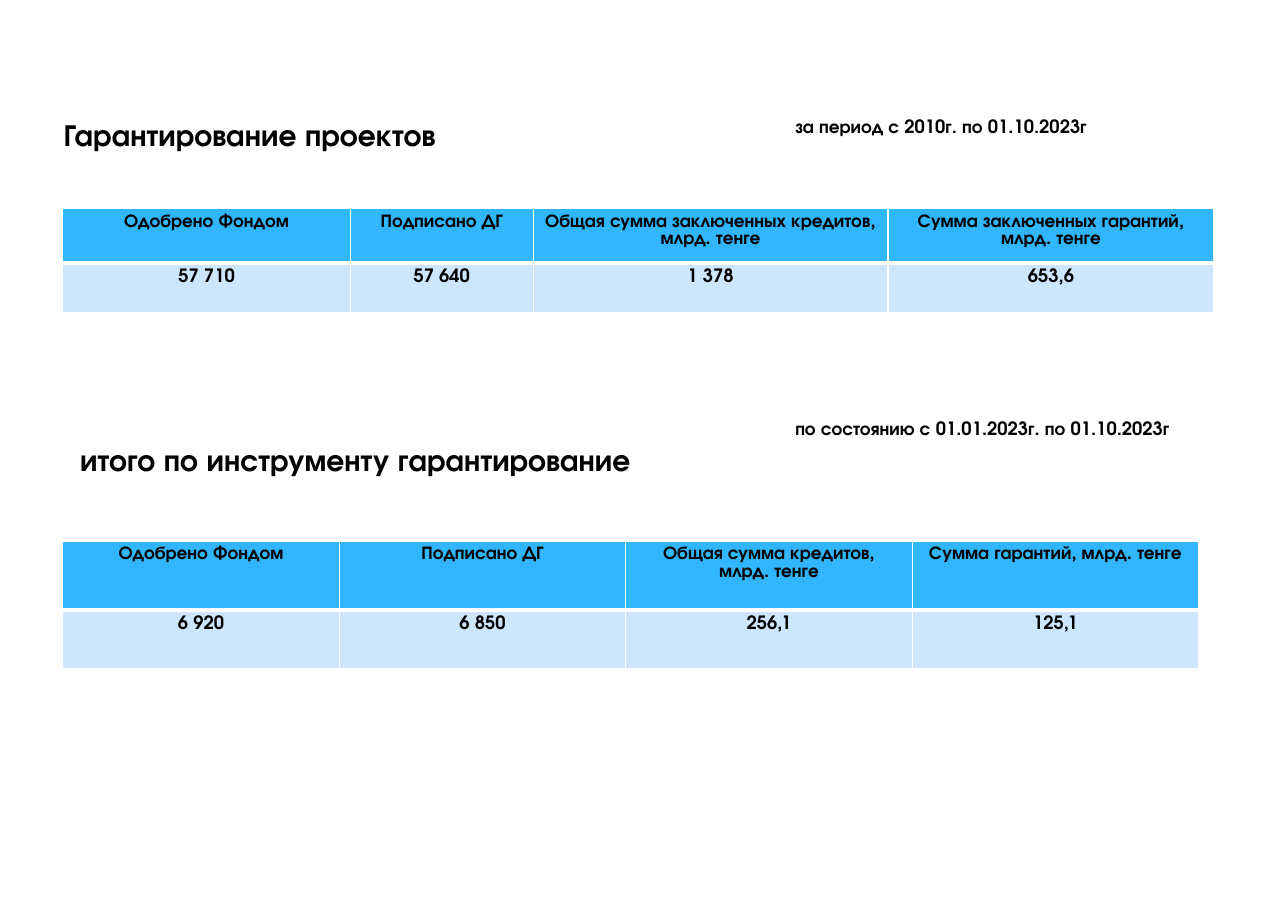
from dataclasses import dataclass

from lxml.etree import SubElement
from pptx import Presentation
from pptx.dml.color import RGBColor
from pptx.enum.text import MSO_AUTO_SIZE as AutoSize, PP_ALIGN as Align
from pptx.oxml.ns import qn
from pptx.util import Inches, Pt


@dataclass(frozen=True)
class Theme:
    """Colours, font, type sizes and rule widths of the slide."""
    font: str = "TeX Gyre Adventor"
    ink: str = "000000"
    header: str = "31B6FD"
    body: str = "CEE5FE"
    rule: str = "FFFFFF"
    title_size: int = 20
    text_size: int = 12
    thin: int = 1
    thick: int = 3


THEME = Theme()


def write_text(frame, text, size=THEME.text_size, align=Align.LEFT):
    """Write one bold paragraph into a text frame."""
    frame.word_wrap = True
    paragraph = frame.paragraphs[0]
    paragraph.alignment = align
    run = paragraph.add_run()
    run.text = text
    run.font.name = THEME.font
    run.font.size = Pt(size)
    run.font.bold = True
    run.font.color.rgb = RGBColor.from_string(THEME.ink)


def add_label(slide, box, text, **text_format):
    """Add a text box that grows with its text."""
    shape = slide.shapes.add_textbox(*map(Inches, box))
    write_text(shape.text_frame, text, **text_format)
    shape.text_frame.auto_size = AutoSize.SHAPE_TO_FIT_TEXT


def set_borders(cell, top, bottom):
    """Give a cell white borders, with its own top and bottom widths."""
    properties = cell._tc.get_or_add_tcPr()
    widths = {"a:lnL": THEME.thin, "a:lnR": THEME.thin, "a:lnT": top, "a:lnB": bottom}
    for index, (tag, width) in enumerate(widths.items()):
        line = properties.makeelement(qn(tag), {"w": str(Pt(width))})
        fill = SubElement(line, qn("a:solidFill"))
        SubElement(fill, qn("a:srgbClr"), val=THEME.rule)
        properties.insert(index, line)


def add_figures(slide, left, top, widths, heights, rows):
    """Add a table with a header row and a row of figures."""
    frame = slide.shapes.add_table(
        len(rows), len(widths), Inches(left), Inches(top),
        Inches(sum(widths)), Inches(sum(heights)))
    table = frame.table
    for column, width in zip(table.columns, widths):
        column.width = Inches(width)
    styles = ((THEME.header, THEME.thin, THEME.thick),
              (THEME.body, THEME.thick, THEME.thin))
    for row, height, texts, (colour, upper, lower) in zip(table.rows, heights, rows, styles):
        row.height = Inches(height)
        for cell, text in zip(row.cells, texts):
            cell.fill.solid()
            cell.fill.fore_color.rgb = RGBColor.from_string(colour)
            set_borders(cell, upper, lower)
            write_text(cell.text_frame, text, align=Align.CENTER)


def add_section(slide, box, title, title_box, period, period_box, widths, heights, rows):
    """Place a title, a period and a table relative to the section box."""
    left, top = box

    def place(area):
        return left + area[0], top + area[1], *area[2:]

    add_label(slide, place(period_box), period)
    add_label(slide, place(title_box), title, size=THEME.title_size)
    add_figures(slide, left, top, widths, heights, rows)


def main():
    """Build the slide on guaranteed projects."""
    presentation = Presentation()
    presentation.slide_width = Inches(11.69)
    presentation.slide_height = Inches(8.27)
    slide = presentation.slides.add_slide(presentation.slide_layouts[6])

    add_section(
        slide, (0.57, 1.89),
        "Гарантирование проектов", (-0.09, -0.89, 7.24, 0.44),
        "за период с 2010г. по 01.10.2023г", (6.55, -0.89, 3.63, 0.3),
        (2.61, 1.66, 3.22, 2.96), (0.5, 0.45),
        (("Одобрено Фондом", "Подписано ДГ",
          "Общая сумма заключенных кредитов, млрд. тенге",
          "Сумма заключенных гарантий, млрд. тенге"),
         ("57 710", "57 640", "1 378", "653,6")))
    add_section(
        slide, (0.57, 4.91),
        "итого по инструменту гарантирование", (0.06, -0.96, 7.02, 0.44),
        "по состоянию с 01.01.2023г. по 01.10.2023г", (6.55, -1.17, 3.94, 0.3),
        (2.51, 2.6, 2.6, 2.6), (0.63, 0.53),
        (("Одобрено Фондом", "Подписано ДГ", "Общая сумма кредитов, млрд. тенге",
          "Сумма гарантий, млрд. тенге"),
         ("6 920", "6 850", "256,1", "125,1")))
    presentation.save("out.pptx")


if __name__ == "__main__":
    main()
